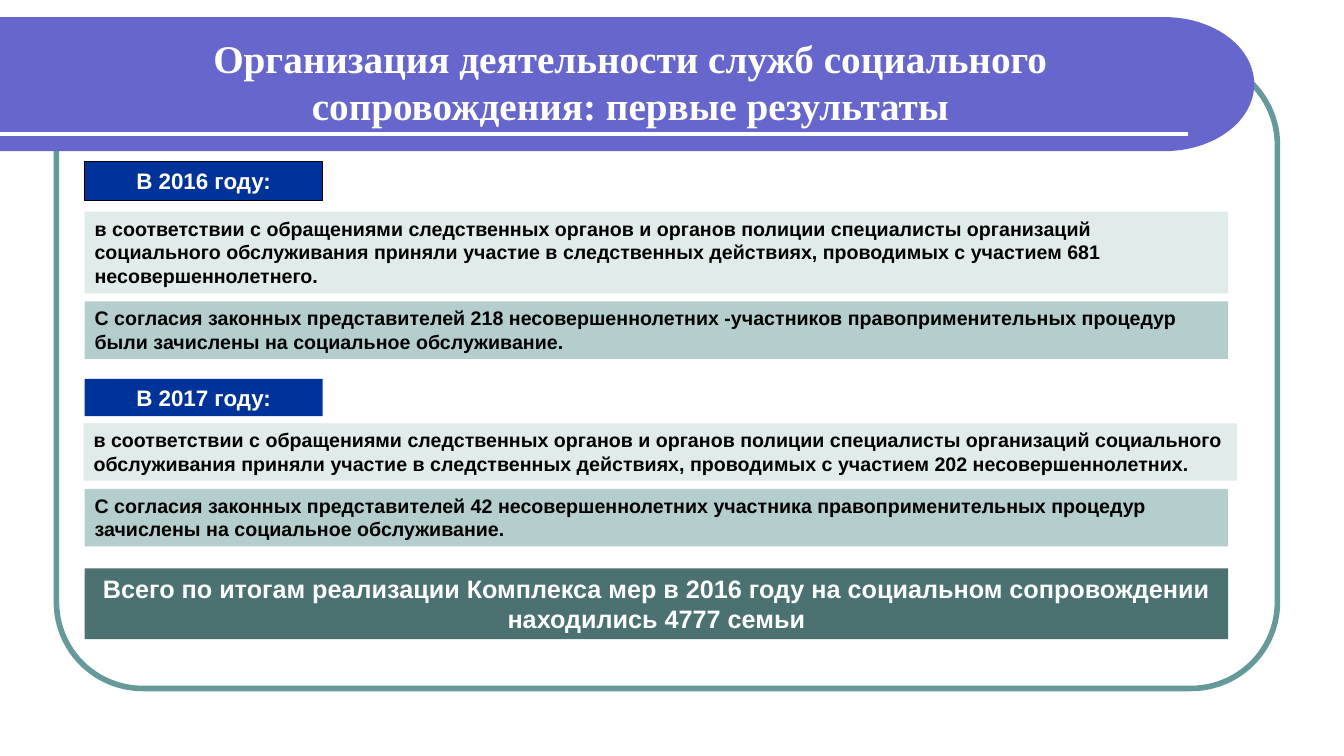
import math

from lxml import etree
from pptx import Presentation
from pptx.dml.color import RGBColor
from pptx.enum.shapes import MSO_CONNECTOR, MSO_SHAPE
from pptx.enum.text import MSO_ANCHOR, MSO_AUTO_SIZE, PP_ALIGN
from pptx.oxml.ns import qn
from pptx.util import Inches, Pt

RECTANGLE, ROUNDED = MSO_SHAPE.RECTANGLE, MSO_SHAPE.ROUNDED_RECTANGLE
STRAIGHT = MSO_CONNECTOR.STRAIGHT
TOP, MIDDLE = MSO_ANCHOR.TOP, MSO_ANCHOR.MIDDLE
LEFT, CENTER = PP_ALIGN.LEFT, PP_ALIGN.CENTER
FIXED, GROW = MSO_AUTO_SIZE.NONE, MSO_AUTO_SIZE.SHAPE_TO_FIT_TEXT

# Content
TITLE = "Организация деятельности служб социального сопровождения: первые результаты"
# style, text, (left, top, width, height)
BOXES = [
    ("year", "В 2016 году:", (0.84, 1.6, 2.36, 0.39)),
    ("request", "в соответствии с обращениями следственных органов и органов полиции "
     "специалисты организаций социального обслуживания приняли участие в следственных "
     "действиях, проводимых с участием 681 несовершеннолетнего.", (0.84, 2.1, 11.34, 0.81)),
    ("consent", "С согласия законных представителей 218 несовершеннолетних -участников "
     "правоприменительных процедур были зачислены на социальное обслуживание.",
     (0.84, 2.99, 11.34, 0.57)),
    ("year", "В 2017 году:", (0.84, 3.76, 2.36, 0.37)),
    ("request", "в соответствии с обращениями следственных органов и органов полиции "
     "специалисты организаций социального обслуживания приняли участие в следственных "
     "действиях, проводимых с участием 202 несовершеннолетних.", (0.83, 4.2, 11.44, 0.57)),
    ("consent", "С согласия законных представителей 42 несовершеннолетних участника "
     "правоприменительных процедур зачислены на социальное обслуживание.",
     (0.84, 4.85, 11.34, 0.57)),
    ("total", "Всего по итогам реализации Комплекса мер в 2016 году на социальном "
     "сопровождении находились 4777 семьи", (0.84, 5.64, 11.34, 0.7)),
]
COLORS = {
    "frame": "669999", "banner": "6666CC", "white": "FFFFFF", "black": "000000",
    "year": "003399", "request": "E1EBEA", "consent": "B3CECD", "total": "4B7170",
}
# text size, text colour, alignment
STYLES = {
    "year": (16, "white", CENTER),
    "request": (14, "black", LEFT),
    "consent": (14, "black", LEFT),
    "total": (18, "white", CENTER),
}


def color(name):
    return RGBColor.from_string(COLORS[name])


def paint(shape, fill=None, line=None, width=0.75):
    shape.shadow.inherit = False
    if fill:
        shape.fill.solid()
        shape.fill.fore_color.rgb = color(fill)
    else:
        shape.fill.background()
    if line:
        shape.line.color.rgb = color(line)
        shape.line.width = Pt(width)
    else:
        shape.line.fill.background()


def write(shape, text, font, size, ink, align, anchor, fit):
    frame = shape.text_frame
    frame.word_wrap = True
    frame.auto_size = fit
    frame.vertical_anchor = anchor
    para = frame.paragraphs[0]
    para.alignment = align
    span = para.add_run()
    span.text = text
    span.font.name = font
    span.font.size = Pt(size)
    span.font.bold = True
    span.font.color.rgb = color(ink)


def add_banner(page):
    top, bottom, bend, radius = 0.17, 1.5, 11.55, 0.89
    middle, half = (top + bottom) / 2, (bottom - top) / 2
    steps = 48
    angles = [math.pi * (step / steps - 0.5) for step in range(steps + 1)]
    outline = [(bend + radius * math.cos(a), middle + half * math.sin(a)) for a in angles]
    outline.append((0, bottom))
    builder = page.shapes.build_freeform(0, Inches(top))
    builder.add_line_segments([(Inches(x), Inches(y)) for x, y in outline], close=True)
    paint(builder.convert_to_shape(), "banner")


def main():
    deck = Presentation()
    deck.slide_width, deck.slide_height = Inches(13.33), Inches(7.5)
    page = deck.slides.add_slide(deck.slide_layouts[5])

    # Frame, banner and white rule
    frame = page.shapes.add_shape(
        ROUNDED, Inches(0.56), Inches(0.58), Inches(12.11), Inches(6.25))
    frame.adjustments[0] = 0.137
    paint(frame, line="frame", width=4)
    add_banner(page)
    rule = page.shapes.add_connector(
        STRAIGHT, 0, Inches(1.33), Inches(11.78), Inches(1.33))
    rule.line.color.rgb = color("white")
    rule.line.width = Pt(3)
    etree.SubElement(rule._element.spPr, qn("a:effectLst"))

    # Title, brought in front of the banner
    title = page.shapes.title
    title.left, title.top = Inches(1.86), Inches(0.36)
    title.width, title.height = Inches(8.78), Inches(0.89)
    write(title, TITLE, "Times New Roman", 28, "white", CENTER, MIDDLE, FIXED)
    page.shapes._spTree.append(title._element)

    # Text boxes; the first year label is outlined
    for index, (style, text, place) in enumerate(BOXES):
        box = page.shapes.add_shape(RECTANGLE, *map(Inches, place))
        first = index == 0
        paint(box, style, "black" if first else None)
        size, ink, align = STYLES[style]
        write(box, text, "Arial", size, ink, align,
              MIDDLE if first else TOP, FIXED if first else GROW)

    deck.save("out.pptx")


if __name__ == "__main__":
    main()
